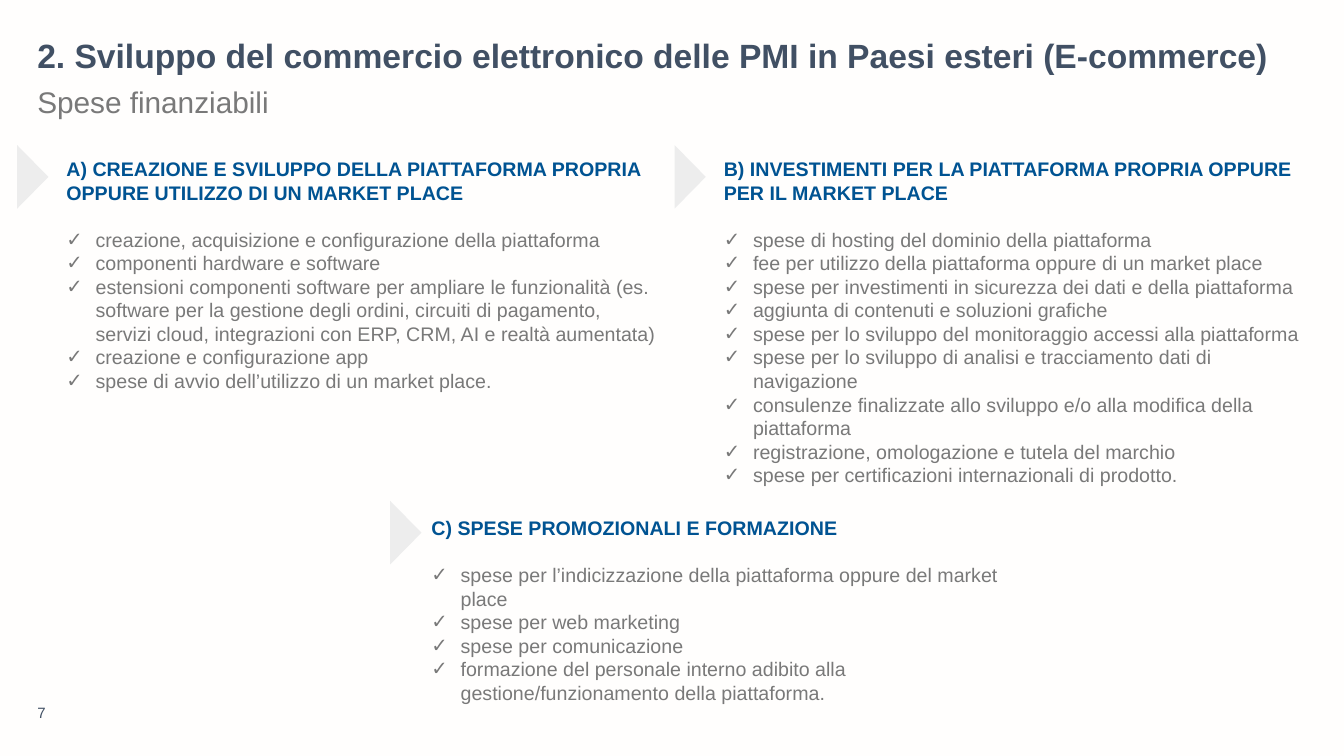
"""Build the slide on fundable e-commerce expenses."""
from dataclasses import dataclass

from lxml.etree import SubElement
from pptx import Presentation
from pptx.dml.color import RGBColor
from pptx.enum.shapes import MSO_SHAPE
from pptx.enum.text import MSO_ANCHOR
from pptx.oxml.ns import qn
from pptx.util import Inches, Pt

FONT = "Arial"
NAVY = RGBColor(0x41, 0x50, 0x64)
BLUE = RGBColor(0x00, 0x53, 0x92)
GREY = RGBColor(0x79, 0x79, 0x79)
PALE = RGBColor(0xED, 0xED, 0xED)
IVORY = RGBColor(0xFF, 0xFE, 0xFD)

INDENT = Inches(0.29)
SECTION_WIDTH = 6.05
MARKER_WIDTH, MARKER_HEIGHT = 0.63, 0.31


@dataclass(frozen=True)
class Label:
    text: str
    left: float
    top: float
    width: float
    height: float
    size: float
    color: RGBColor
    bold: bool = False
    line_spacing: float = 1.0
    anchor: MSO_ANCHOR = MSO_ANCHOR.TOP


@dataclass(frozen=True)
class Section:
    heading: str
    left: float
    top: float
    height: float
    marker_left: float
    marker_top: float
    expenses: tuple[str, ...]


LABELS = (
    Label("2. Sviluppo del commercio elettronico delle PMI in Paesi esteri (E-commerce)",
          0.37, 0.39, 12.97, 0.42, 24, NAVY, bold=True, line_spacing=0.9),
    Label("Spese finanziabili", 0.37, 0.87, 9.4, 0.42, 21.3, GREY, line_spacing=0.9),
    Label("7", 0.37, 6.89, 1.47, 0.27, 10.7, NAVY, anchor=MSO_ANCHOR.BOTTOM),
)

SECTIONS = (
    Section(
        "A) CREAZIONE E SVILUPPO DELLA PIATTAFORMA PROPRIA OPPURE UTILIZZO DI UN MARKET PLACE",
        0.56, 1.51, 2.46, 0.01, 1.6,
        (
            "creazione, acquisizione e configurazione della piattaforma",
            "componenti hardware e software",
            "estensioni componenti software per ampliare le funzionalità (es. software per la "
            "gestione degli ordini, circuiti di pagamento, servizi cloud, integrazioni con ERP, "
            "CRM, AI e realtà aumentata)",
            "creazione e configurazione app",
            "spese di avvio dell’utilizzo di un market place.",
        ),
    ),
    Section(
        "B) INVESTIMENTI PER LA PIATTAFORMA PROPRIA OPPURE PER IL MARKET PLACE",
        7.08, 1.51, 3.4, 6.53, 1.6,
        (
            "spese di hosting del dominio della piattaforma",
            "fee per utilizzo della piattaforma oppure di un market place",
            "spese per investimenti in sicurezza dei dati e della piattaforma",
            "aggiunta di contenuti e soluzioni grafiche",
            "spese per lo sviluppo del monitoraggio accessi alla piattaforma",
            "spese per lo sviluppo di analisi e tracciamento dati di navigazione",
            "consulenze finalizzate allo sviluppo e/o alla modifica della piattaforma",
            "registrazione, omologazione e tutela del marchio",
            "spese per certificazioni internazionali di prodotto.",
        ),
    ),
    Section(
        "C) SPESE PROMOZIONALI E FORMAZIONE",
        4.18, 5.07, 1.99, 3.71, 5.13,
        (
            "spese per l’indicizzazione della piattaforma oppure del market place",
            "spese per web marketing",
            "spese per comunicazione",
            "formazione del personale interno adibito alla gestione/funzionamento della "
            "piattaforma.",
        ),
    ),
)


def style(paragraph, size: float, color: RGBColor, bold: bool = False) -> None:
    """Format every run of a paragraph."""
    for run in paragraph.runs:
        run.font.name = FONT
        run.font.size = Pt(size)
        run.font.bold = bold
        run.font.color.rgb = color


def add_check(paragraph) -> None:
    """Give a paragraph a check mark with a hanging indent."""
    properties = paragraph._p.get_or_add_pPr()
    properties.set("marL", str(INDENT))
    properties.set("indent", str(-INDENT))
    SubElement(properties, qn("a:buFont"), typeface=FONT)
    SubElement(properties, qn("a:buChar"), char="✓")


def add_frame(slide, left: float, top: float, width: float, height: float):
    """Add a wrapping text box and return its text frame."""
    box = slide.shapes.add_textbox(Inches(left), Inches(top), Inches(width), Inches(height))
    box.text_frame.word_wrap = True
    return box.text_frame


def add_label(slide, label: Label) -> None:
    """Add a single line of text without margins."""
    frame = add_frame(slide, label.left, label.top, label.width, label.height)
    frame.margin_left = frame.margin_right = frame.margin_top = frame.margin_bottom = 0
    frame.vertical_anchor = label.anchor
    frame.text = label.text
    frame.paragraphs[0].line_spacing = label.line_spacing
    style(frame.paragraphs[0], label.size, label.color, label.bold)


def add_section(slide, section: Section) -> None:
    """Add a marker, a heading and its list of expenses."""
    marker = slide.shapes.add_shape(
        MSO_SHAPE.ISOSCELES_TRIANGLE, Inches(section.marker_left), Inches(section.marker_top),
        Inches(MARKER_WIDTH), Inches(MARKER_HEIGHT))
    marker.rotation = 90
    marker.shadow.inherit = False
    marker.fill.solid()
    marker.fill.fore_color.rgb = PALE
    marker.line.fill.background()

    frame = add_frame(slide, section.left, section.top, SECTION_WIDTH, section.height)
    frame.text = section.heading
    style(frame.paragraphs[0], 14, BLUE, bold=True)
    for position, expense in enumerate(section.expenses):
        paragraph = frame.add_paragraph()
        paragraph.text = expense
        add_check(paragraph)
        if position == 0:
            paragraph.space_before = Pt(16.8)
        style(paragraph, 14, GREY)


def main() -> None:
    """Build and save the presentation."""
    presentation = Presentation()
    presentation.slide_width = Inches(13.33)
    presentation.slide_height = Inches(7.5)
    slide = presentation.slides.add_slide(presentation.slide_layouts[6])
    slide.background.fill.solid()
    slide.background.fill.fore_color.rgb = IVORY
    for label in LABELS:
        add_label(slide, label)
    for section in SECTIONS:
        add_section(slide, section)
    presentation.save("out.pptx")


if __name__ == "__main__":
    main()
